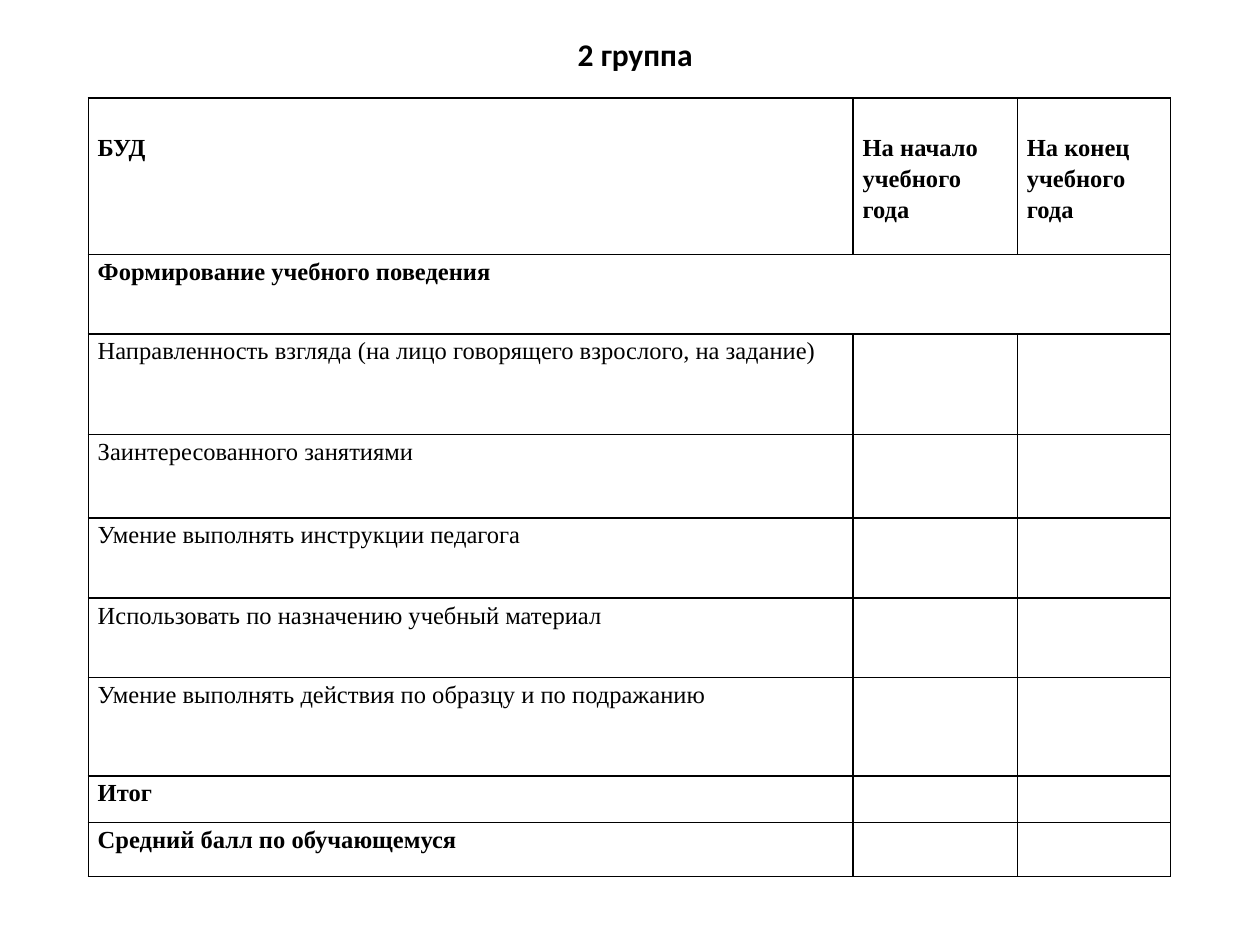
from dataclasses import dataclass

from lxml import etree
from pptx import Presentation
from pptx import util as u
from pptx.dml.color import RGBColor
from pptx.enum import text
from pptx.oxml.ns import qn


@dataclass(frozen=True)
class Theme:
    ink: str = "000000"
    heading_font: str = "Calibri"
    table_font: str = "Times New Roman"
    heading_size: int = 18
    table_size: int = 14
    border_width: int = 1
    line_spacing: float = 1.15


@dataclass(frozen=True)
class Row:
    height: float
    labels: tuple[str, ...]
    bold: bool = False
    merged: bool = False
    top_inset: float = 0


THEME = Theme()
COLUMN_WIDTHS = (15.42, 3.31, 3.09)
ROWS = (
    Row(3.15, ("БУД", "На начало учебного года", "На конец учебного года"),
        bold=True, top_inset=0.65),
    Row(1.6, ("Формирование учебного поведения",), bold=True, merged=True),
    Row(2.03, ("Направленность взгляда (на лицо говорящего взрослого, на задание)",)),
    Row(1.68, ("Заинтересованного занятиями",)),
    Row(1.62, ("Умение выполнять инструкции педагога",)),
    Row(1.6, ("Использовать по назначению учебный материал",)),
    Row(1.98, ("Умение выполнять действия по образцу и по подражанию",)),
    Row(0.94, ("Итог",), bold=True),
    Row(1.09, ("Средний балл по обучающемуся",), bold=True),
)


def write(frame, words: str, *, font: str, size: int, bold: bool = False,
          align=text.PP_ALIGN.LEFT, spacing: float = 1.0) -> None:
    paragraph = frame.paragraphs[0]
    paragraph.alignment = align
    paragraph.line_spacing = spacing
    run = paragraph.add_run()
    run.text = words
    run.font.name = font
    run.font.size = u.Pt(size)
    run.font.bold = bold
    run.font.color.rgb = RGBColor.from_string(THEME.ink)


def outline(cell) -> None:
    """Draw all four borders; must run before the cell gets its fill."""
    properties = cell._tc.get_or_add_tcPr()
    for side in ("a:lnL", "a:lnR", "a:lnT", "a:lnB"):
        line = etree.SubElement(properties, qn(side), w=str(u.Pt(THEME.border_width)))
        fill = etree.SubElement(line, qn("a:solidFill"))
        etree.SubElement(fill, qn("a:srgbClr"), val=THEME.ink)


def style_cell(cell, top_inset: float) -> None:
    outline(cell)
    cell.fill.background()
    cell.margin_left = cell.margin_right = u.Cm(0.19)
    cell.margin_top = u.Cm(top_inset)
    cell.margin_bottom = u.Cm(0)


def add_heading(slide) -> None:
    heading = slide.shapes.add_textbox(u.Cm(4.17), u.Cm(0.58), u.Cm(17.27), u.Cm(1.02))
    heading.text_frame.word_wrap = True
    write(heading.text_frame, "2 группа", font=THEME.heading_font,
          size=THEME.heading_size, bold=True, align=text.PP_ALIGN.CENTER)


def add_skills_table(slide) -> None:
    skills = slide.shapes.add_table(
        len(ROWS), len(COLUMN_WIDTHS), u.Cm(1.78), u.Cm(1.98),
        u.Cm(sum(COLUMN_WIDTHS)), u.Cm(sum(row.height for row in ROWS))).table
    skills.first_row = skills.horz_banding = False
    for column, width in zip(skills.columns, COLUMN_WIDTHS):
        column.width = u.Cm(width)
    for table_row, row in zip(skills.rows, ROWS):
        table_row.height = u.Cm(row.height)
        cells = list(table_row.cells)
        for cell in cells:
            style_cell(cell, row.top_inset)
        if row.merged:
            cells[0].merge(cells[-1])
        for cell, label in zip(cells, row.labels):
            write(cell.text_frame, label, font=THEME.table_font, size=THEME.table_size,
                  bold=row.bold, spacing=THEME.line_spacing)


def main() -> None:
    deck = Presentation()
    deck.slide_width, deck.slide_height = u.Cm(25.4), u.Cm(19.05)
    slide = deck.slides.add_slide(deck.slide_layouts[6])
    add_skills_table(slide)
    add_heading(slide)
    deck.save("out.pptx")


if __name__ == "__main__":
    main()
